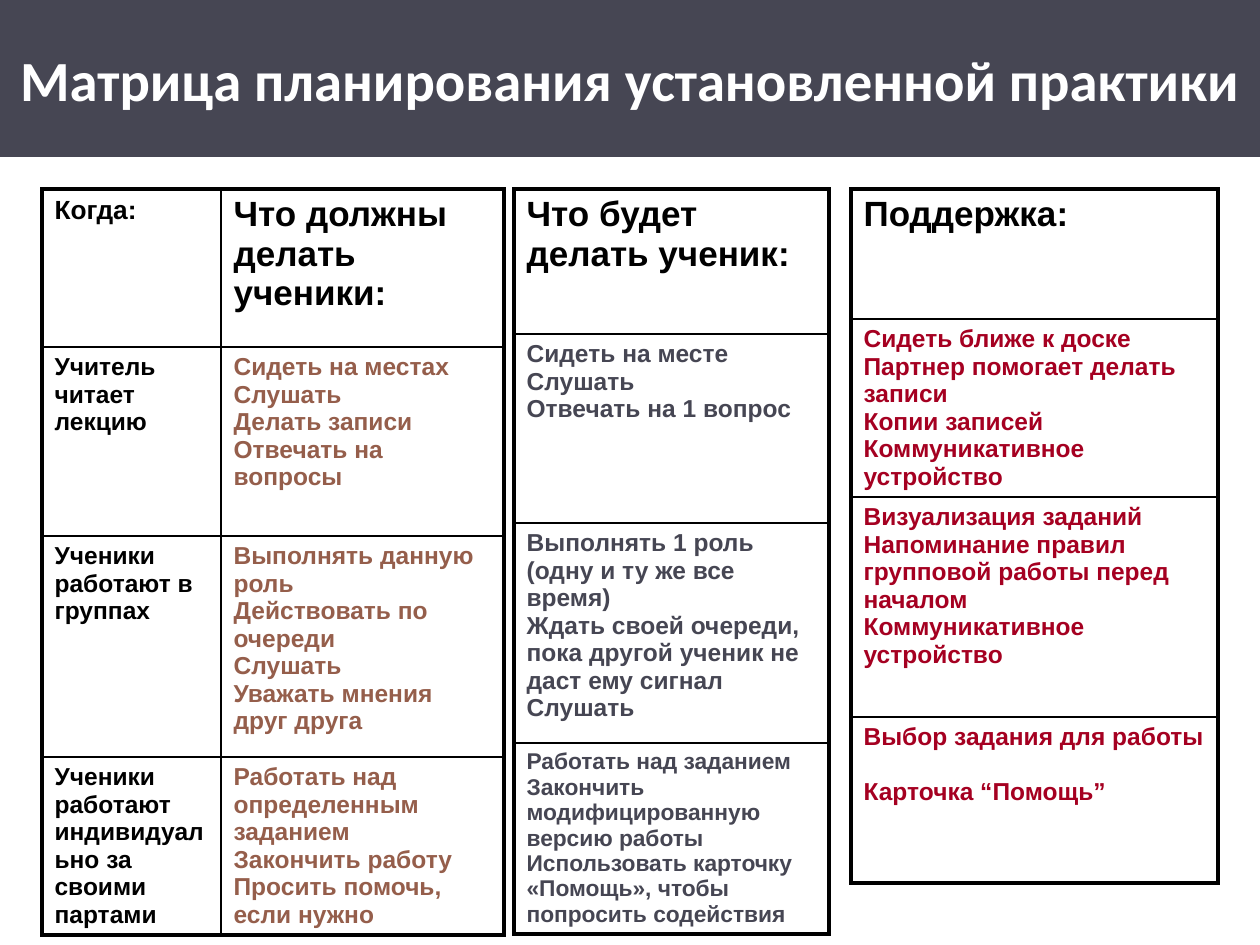
from lxml import etree
from pptx import Presentation
from pptx import util as u
from pptx.dml import color as dml
from pptx.enum import text
from pptx.oxml import ns


def px(n):
    return u.Emu(round(n * 914400 / 126))


def rgb(value):
    return dml.RGBColor.from_string(value)


BLACK, BROWN, SLATE, RED = "000000", "955E4B", "464653", "A50021"
THIN, THICK = 1, 2.25

when = (BLACK, [15, 14, 14, 14], [
    "Когда:",
    "Учитель читает лекцию",
    "Ученики работают в группах",
    "Ученики работают индивидуально за своими партами",
])
class_tasks = (BROWN, [20, 14, 14, 14], [
    "Что должны делать ученики:",
    "Сидеть на местах\nСлушать\nДелать записи\nОтвечать на вопросы",
    "Выполнять данную роль\nДействовать по очереди\nСлушать\nУважать мнения друг друга",
    "Работать над определенным заданием\nЗакончить работу\nПросить помочь, если нужно",
])
support = (RED, [20, 14, 14, 14], [
    "Поддержка:",
    "Сидеть ближе к доске\nПартнер помогает делать записи\nКопии записей\n"
    "Коммуникативное устройство",
    "Визуализация заданий\nНапоминание правил групповой работы перед началом\n"
    "Коммуникативное устройство",
    "Выбор задания для работы\nКарточка “Помощь”",
])
student_tasks = (SLATE, [20, 14, 14, 13], [
    "Что будет делать ученик:",
    "Сидеть на месте\nСлушать\nОтвечать на 1 вопрос",
    "Выполнять 1 роль (одну и ту же все время)\n"
    "Ждать своей очереди, пока другой ученик не даст ему сигнал\nСлушать",
    "Работать над заданием\nЗакончить модифицированную версию работы\n"
    "Использовать карточку «Помощь», чтобы попросить содействия",
])
matrices = [
    (42, [179, 283], [158, 189, 221, 178], [when, class_tasks]),
    (851, [367], [130, 178, 220, 166], [support]),
    (514, [315], [145, 189, 220, 191], [student_tasks]),
]

prs = Presentation()
prs.slide_width, prs.slide_height = px(1260), px(945)
slide = prs.slides.add_slide(prs.slide_layouts[5])

title = slide.shapes.title
title.left, title.top, title.width, title.height = px(0), px(0), px(1260), px(157)
title.fill.solid()
title.fill.fore_color.rgb = rgb(SLATE)
title.text_frame.text = "Матрица планирования установленной практики"
title.text_frame.vertical_anchor = text.MSO_ANCHOR.MIDDLE
heading = title.text_frame.paragraphs[0]
heading.alignment = text.PP_ALIGN.CENTER
heading.font.name = "Calibri"
heading.font.size = u.Pt(32.4)
heading.font.bold = True
heading.font.color.rgb = rgb("FFFFFF")

for left, widths, heights, columns in matrices:
    matrix = slide.shapes.add_table(
        len(heights), len(widths), px(left), px(189), px(sum(widths)), px(sum(heights))
    ).table
    matrix.first_row = matrix.horz_banding = False
    for row, height in zip(matrix.rows, heights):
        row.height = px(height)
    last_row, last_col = len(heights) - 1, len(widths) - 1
    for c, (body_color, sizes, entries) in enumerate(columns):
        matrix.columns[c].width = px(widths[c])
        for r, (size, entry) in enumerate(zip(sizes, entries)):
            cell = matrix.cell(r, c)
            cell.text = entry
            for paragraph in cell.text_frame.paragraphs:
                paragraph.font.name = "Arial"
                paragraph.font.size = u.Pt(size)
                paragraph.font.bold = True
                paragraph.font.color.rgb = rgb(body_color if r else BLACK)
            outer = {"lnL": c == 0, "lnR": c == last_col, "lnT": r == 0, "lnB": r == last_row}
            properties = cell._tc.get_or_add_tcPr()
            for side, is_outer in outer.items():
                width = u.Pt(THICK if is_outer else THIN)
                border = etree.SubElement(properties, ns.qn("a:" + side), w=str(width))
                fill = etree.SubElement(border, ns.qn("a:solidFill"))
                etree.SubElement(fill, ns.qn("a:srgbClr"), val=BLACK)
            cell.fill.background()
    if columns[0] is support:
        matrix.cell(last_row, 0).text_frame.paragraphs[1].space_before = u.Pt(16)

prs.save("out.pptx")
